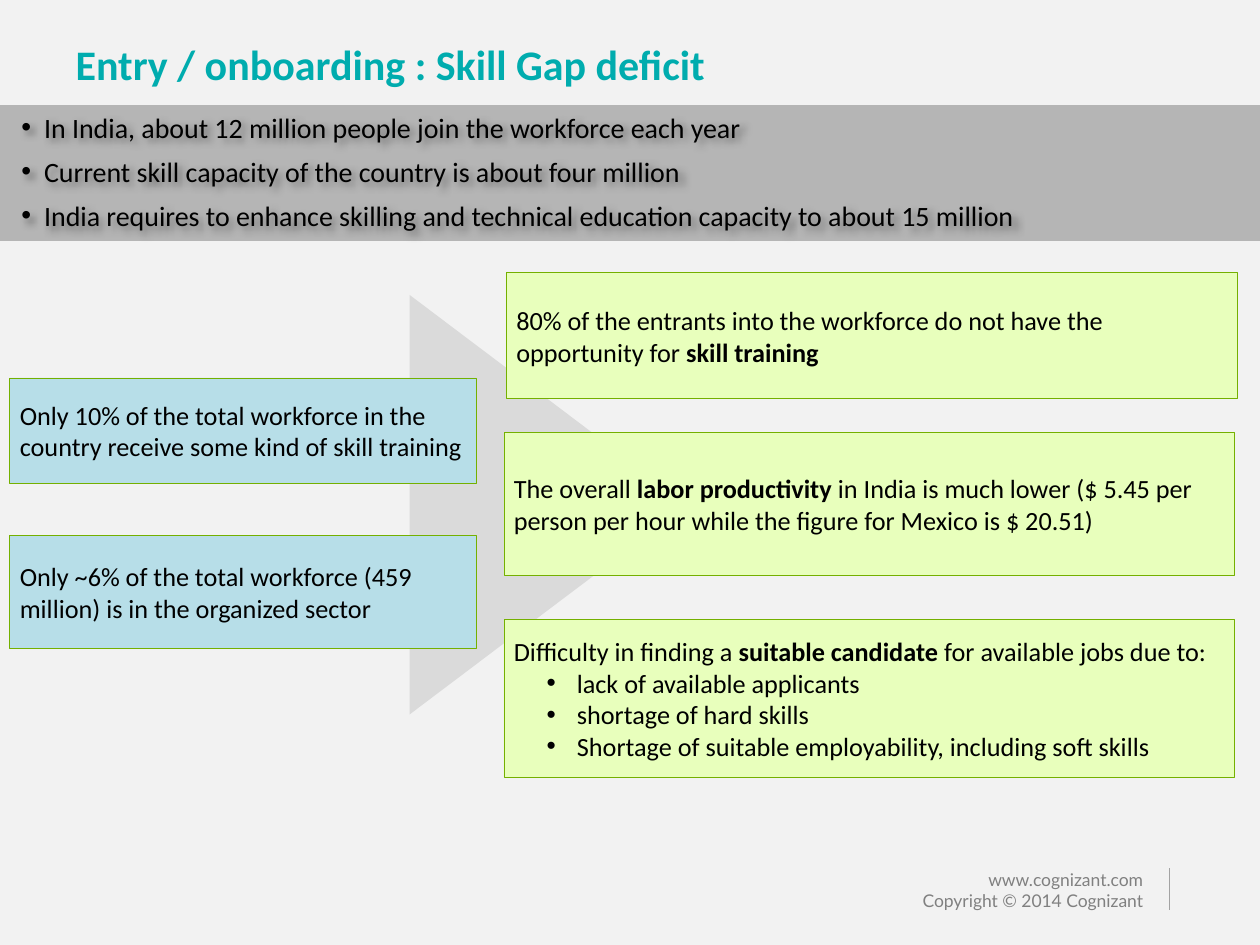
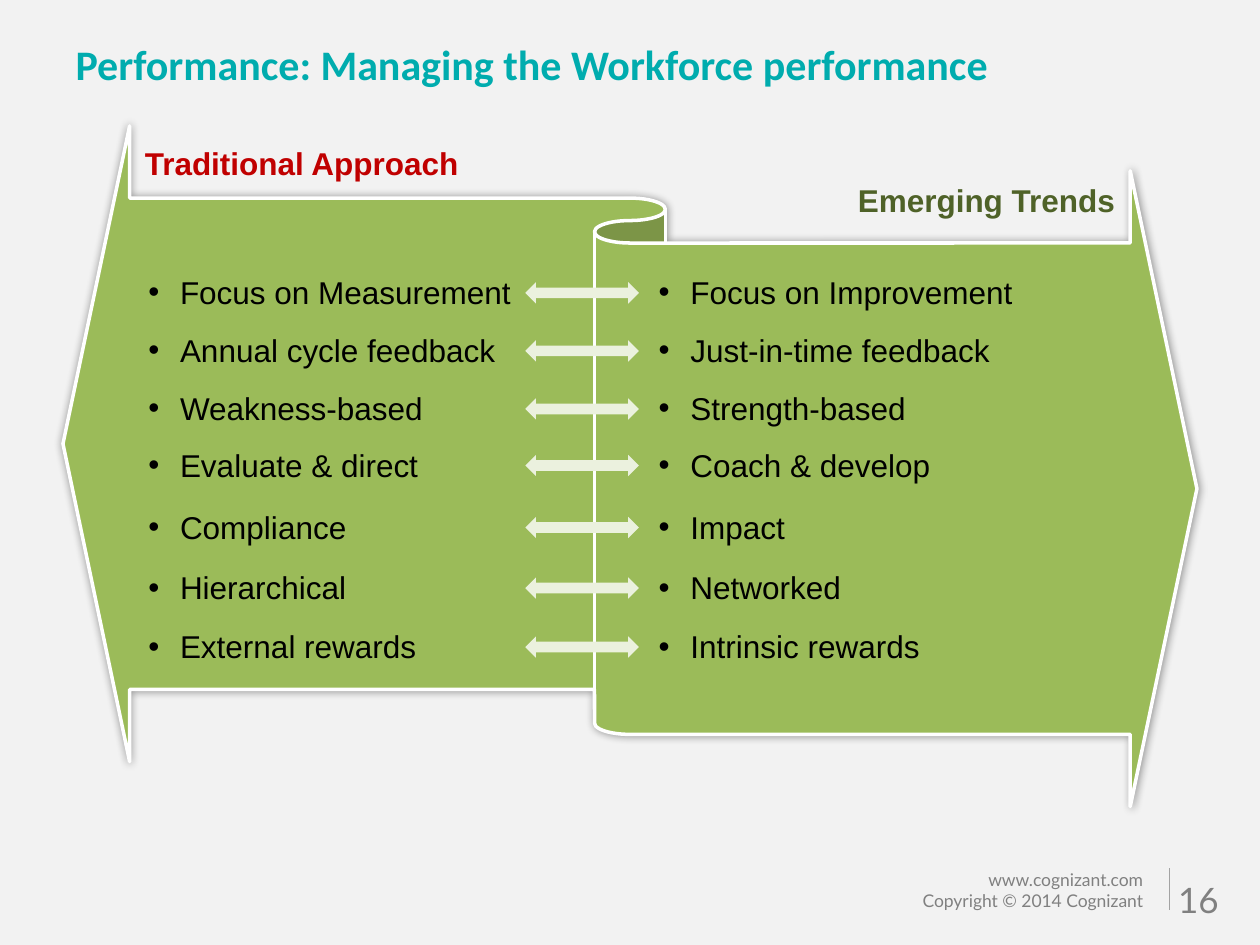
from dataclasses import dataclass

from lxml import etree
from pptx import Presentation
from pptx.dml.color import RGBColor
from pptx.enum.shapes import MSO_CONNECTOR, MSO_SHAPE
from pptx.enum.text import MSO_ANCHOR, MSO_AUTO_SIZE, PP_ALIGN
from pptx.oxml.ns import qn
from pptx.presentation import Presentation as Deck
from pptx.shapes.autoshape import Shape
from pptx.slide import Slide
from pptx.text.text import TextFrame, _Paragraph
from pptx.util import Cm, Length, Pt

RECTANGLE = MSO_SHAPE.RECTANGLE
EXTRACT = MSO_SHAPE.FLOWCHART_EXTRACT
RIBBON = MSO_SHAPE.LEFT_RIGHT_RIBBON
DOUBLE_ARROW = MSO_SHAPE.LEFT_RIGHT_ARROW
STRAIGHT = MSO_CONNECTOR.STRAIGHT
TOP, MIDDLE = MSO_ANCHOR.TOP, MSO_ANCHOR.MIDDLE
LEFT, RIGHT = PP_ALIGN.LEFT, PP_ALIGN.RIGHT
NO_AUTOFIT = MSO_AUTO_SIZE.NONE

BACKGROUND = RGBColor(0xF2, 0xF2, 0xF2)
BLACK = RGBColor(0x00, 0x00, 0x00)
WHITE = RGBColor(0xFF, 0xFF, 0xFF)
TEAL = RGBColor(0x00, 0xAC, 0xAE)
FOOTER_GREY = RGBColor(0x80, 0x80, 0x80)
RULE_GREY = RGBColor(0xA3, 0xA3, 0xA3)
BAND_GREY = RGBColor(0xB5, 0xB5, 0xB5)
POINTER_GREY = RGBColor(0xDA, 0xDA, 0xDA)
LIME = RGBColor(0xE8, 0xFF, 0xBC)
LIME_EDGE = RGBColor(0x74, 0xB0, 0x00)
SKY = RGBColor(0xB7, 0xDE, 0xE8)
RIBBON_GREEN = RGBColor(0x9B, 0xBB, 0x59)
PALE_GREEN = RGBColor(0xEB, 0xF1, 0xDE)
RED = RGBColor(0xC0, 0x00, 0x00)
DARK_GREEN = RGBColor(0x4F, 0x62, 0x28)


@dataclass(frozen=True)
class Area:
    left: Length
    top: Length
    width: Length
    height: Length

    def bounds(self) -> tuple[Length, Length, Length, Length]:
        return self.left, self.top, self.width, self.height


@dataclass(frozen=True)
class Style:
    font: str
    size: float
    color: RGBColor
    bold: bool = False
    align: PP_ALIGN = LEFT


@dataclass(frozen=True)
class Fact:
    """A framed statement; words between asterisks are bold."""
    area: Area
    fill: RGBColor
    statement: str
    points: tuple[str, ...] = ()


@dataclass(frozen=True)
class Contrast:
    top: Length
    traditional: str
    emerging: str


TITLE = Style("Calibri", 24, TEAL, bold=True)
FOOTER = Style("Lato", 10, FOOTER_GREY, align=RIGHT)
PAGE_NUMBER = Style("Lato", 20, FOOTER_GREY)
KEY_POINT = Style("Calibri", 16, BLACK)
FACT = Style("Calibri", 15, BLACK)
APPROACH = Style("Arial", 18, BLACK)
TRADITIONAL_HEAD = Style("Arial", 18, RED, bold=True)
EMERGING_HEAD = Style("Arial", 18, DARK_GREEN, bold=True, align=RIGHT)

KEY_POINTS = (
    "In India, about 12 million people join the workforce each year",
    "Current skill capacity of the country is about four million",
    "India requires to enhance skilling and technical education capacity to about 15 million",
)

CAUSE_LEFT, CAUSE_WIDTH = Cm(0.2), Cm(9.4)
EFFECT_LEFT, EFFECT_WIDTH = Cm(10.16), Cm(14.73)
FACTS = (
    Fact(Area(Cm(10.21), Cm(5.5), EFFECT_WIDTH, Cm(2.54)), LIME,
         "80% of the entrants into the workforce do not have the opportunity for "
         "*skill training*"),
    Fact(Area(EFFECT_LEFT, Cm(8.71), EFFECT_WIDTH, Cm(2.9)), LIME,
         "The overall *labor productivity *in India is much lower ($ 5.45 per person "
         "per hour while the figure for Mexico is $ 20.51)"),
    Fact(Area(EFFECT_LEFT, Cm(12.49), EFFECT_WIDTH, Cm(3.18)), LIME,
         "Difficulty in finding a *suitable candidate *for available jobs due to:",
         ("lack of available applicants", "shortage of hard skills",
          "Shortage of suitable employability, including soft skills")),
    Fact(Area(CAUSE_LEFT, Cm(7.62), CAUSE_WIDTH, Cm(2.12)), SKY,
         "Only 10% of the total workforce in the country receive some kind of skill training"),
    Fact(Area(CAUSE_LEFT, Cm(10.8), CAUSE_WIDTH, Cm(2.28)), SKY,
         "Only ~6% of the total workforce (459 million) is in the organized sector"),
)

CONTRASTS = (
    Contrast(Cm(5.38), "Focus on Measurement", "Focus on Improvement"),
    Contrast(Cm(6.55), "Annual cycle feedback", "Just-in-time feedback"),
    Contrast(Cm(7.72), "Weakness-based", "Strength-based"),
    Contrast(Cm(8.86), "Evaluate & direct", "Coach & develop"),
    Contrast(Cm(10.11), "Compliance", "Impact"),
    Contrast(Cm(11.33), "Hierarchical", "Networked"),
    Contrast(Cm(12.52), "External rewards", "Intrinsic rewards"),
)


def format_paragraph(paragraph: _Paragraph, style: Style) -> None:
    paragraph.alignment = style.align
    for run in paragraph.runs:
        run.font.name = style.font
        run.font.size = Pt(style.size)
        run.font.color.rgb = style.color
        run.font.bold = style.bold


def add_bullet(paragraph: _Paragraph, indent: Length, hanging: Length) -> None:
    properties = paragraph._p.get_or_add_pPr()
    properties.set("marL", str(indent))
    properties.set("indent", str(-hanging))
    etree.SubElement(properties, qn("a:buFont")).set("typeface", "Arial")
    etree.SubElement(properties, qn("a:buChar")).set("char", "•")


def set_margins(frame: TextFrame, margin: Length) -> None:
    frame.margin_left = frame.margin_right = margin
    frame.margin_top = frame.margin_bottom = margin


def cast_shadow(shape: Shape, blur: Length, distance: Length, degrees: int) -> None:
    shape.shadow.inherit = False
    effects = shape._element.spPr.find(qn("a:effectLst"))
    shadow = etree.SubElement(effects, qn("a:outerShdw"), blurRad=str(blur),
                              dist=str(distance), dir=str(degrees * 60000))
    color = etree.SubElement(shadow, qn("a:srgbClr"), val=str(BLACK))
    etree.SubElement(color, qn("a:alpha"), val="40000")


def add_text(slide: Slide, area: Area, text: str, style: Style) -> Shape:
    box = slide.shapes.add_textbox(*area.bounds())
    box.text_frame.word_wrap = True
    box.text_frame.text = text
    for paragraph in box.text_frame.paragraphs:
        format_paragraph(paragraph, style)
    return box


def add_filled(slide: Slide, kind: MSO_SHAPE, area: Area, fill: RGBColor,
               edge: RGBColor | None = None, edge_width: float = 0.5) -> Shape:
    shape = slide.shapes.add_shape(kind, *area.bounds())
    shape.shadow.inherit = False
    shape.fill.solid()
    shape.fill.fore_color.rgb = fill
    if edge is None:
        shape.line.fill.background()
    else:
        shape.line.color.rgb = edge
        shape.line.width = Pt(edge_width)
    return shape


def add_footer(slide: Slide) -> None:
    add_text(slide, Area(Cm(17.78), Cm(17.4), Cm(5.51), Cm(1.14)),
             "www.cognizant.com\nCopyright © 2014 Cognizant", FOOTER)
    rule = slide.shapes.add_connector(STRAIGHT, Cm(23.57), Cm(17.5), Cm(23.57), Cm(18.34))
    rule.line.color.rgb = RULE_GREY
    rule.line.width = Pt(0.75)
    etree.SubElement(rule._element.spPr, qn("a:effectLst"))


def add_titled_slide(deck: Deck, heading: str) -> Slide:
    slide = deck.slides.add_slide(deck.slide_layouts[5])
    title = slide.shapes.title
    title.left, title.top, title.width, title.height = Cm(1.27), Cm(0.64), Cm(22.86), Cm(2.11)
    frame = title.text_frame
    frame.text = heading
    frame.word_wrap = True
    frame.auto_size = NO_AUTOFIT
    frame.vertical_anchor = TOP
    format_paragraph(frame.paragraphs[0], TITLE)
    add_footer(slide)
    return slide


def add_fact(slide: Slide, fact: Fact) -> None:
    frame = add_filled(slide, RECTANGLE, fact.area, fact.fill, LIME_EDGE).text_frame
    frame.word_wrap = True
    frame.vertical_anchor = MIDDLE
    set_margins(frame, Cm(0.2))
    statement = frame.paragraphs[0]
    for part in fact.statement.split("*"):
        if part:
            statement.add_run().text = part
    format_paragraph(statement, FACT)
    if "*" in fact.statement:
        statement.runs[1].font.bold = True
    for point in fact.points:
        paragraph = frame.add_paragraph()
        paragraph.text = point
        paragraph.level = 1
        add_bullet(paragraph, Cm(1.27), Cm(0.61))
        format_paragraph(paragraph, FACT)


def build_skill_gap(deck: Deck) -> None:
    slide = add_titled_slide(deck, "Entry / onboarding : Skill Gap deficit")
    pointer = add_filled(slide, EXTRACT, Area(Cm(6.83), Cm(7.37), Cm(8.46), Cm(5.61)),
                         POINTER_GREY)
    pointer.rotation = 90

    band = Area(Cm(0), Cm(2.12), deck.slide_width, Cm(2.74))
    add_filled(slide, RECTANGLE, band, BAND_GREY)
    key_points = add_text(slide, band, "\n".join(KEY_POINTS), KEY_POINT)
    set_margins(key_points.text_frame, Cm(0.1))
    cast_shadow(key_points, Pt(4), Pt(3), 45)
    for paragraph in key_points.text_frame.paragraphs:
        add_bullet(paragraph, Cm(0.79), Cm(0.46))
        paragraph.space_after = Pt(6)

    for fact in FACTS:
        add_fact(slide, fact)


def build_performance(deck: Deck) -> None:
    slide = add_titled_slide(deck, "Performance: Managing the Workforce performance")
    add_text(slide, Area(Cm(23.5), Cm(17.58), Cm(1.9), Cm(1.02)), "16", PAGE_NUMBER)

    ribbon = add_filled(slide, RIBBON, Area(Cm(1.27), Cm(2.54), Cm(22.86), Cm(13.72)),
                        RIBBON_GREEN, WHITE, 2)
    for index, value in enumerate((0.722, 0.098, 0.066)):
        ribbon.adjustments[index] = value
    cast_shadow(ribbon, Pt(5), Pt(0), 0)

    width, height = Cm(8.43), Cm(1.02)
    add_text(slide, Area(Cm(2.67), Cm(2.77), width, height),
             "Traditional Approach", TRADITIONAL_HEAD)
    add_text(slide, Area(Cm(14.3), Cm(3.53), width, height),
             "Emerging Trends", EMERGING_HEAD)

    for contrast in CONTRASTS:
        for left, approach in ((Cm(2.74), contrast.traditional),
                               (Cm(13.03), contrast.emerging)):
            box = add_text(slide, Area(left, contrast.top, width, height), approach, APPROACH)
            add_bullet(box.text_frame.paragraphs[0], Cm(0.64), Cm(0.64))
        add_filled(slide, DOUBLE_ARROW,
                   Area(Cm(10.59), contrast.top + Cm(0.31), Cm(2.29), Cm(0.43)), PALE_GREEN)


def main() -> None:
    deck = Presentation()
    deck.slide_width, deck.slide_height = Cm(25.4), Cm(19.05)
    background = deck.slide_master.background.fill
    background.solid()
    background.fore_color.rgb = BACKGROUND
    build_skill_gap(deck)
    build_performance(deck)
    deck.save("out.pptx")


if __name__ == "__main__":
    main()
